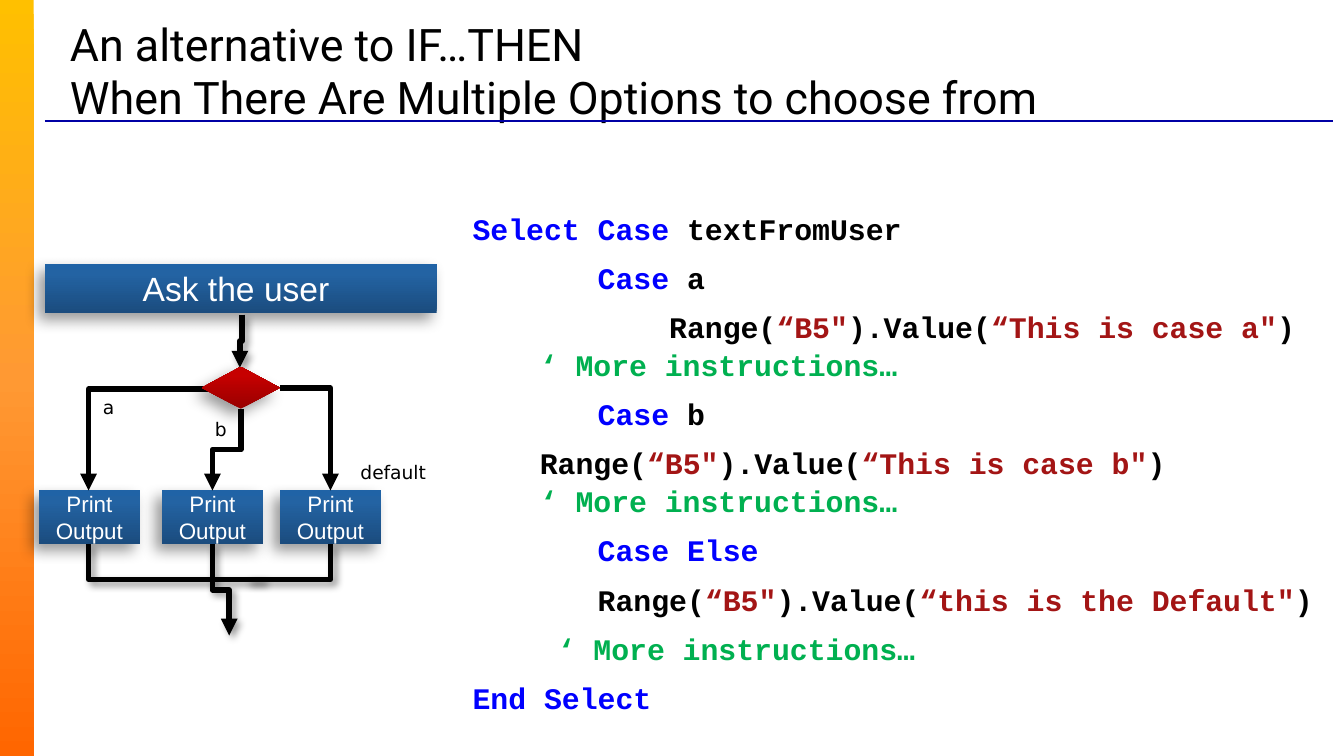
from lxml import etree
from pptx import Presentation
from pptx.dml.color import RGBColor
from pptx.enum.shapes import MSO_CONNECTOR, MSO_SHAPE
from pptx.enum.text import MSO_ANCHOR, MSO_AUTO_SIZE, PP_ALIGN
from pptx.oxml.ns import qn
from pptx.util import Pt

RECT, STEP = MSO_SHAPE.RECTANGLE, MSO_SHAPE.FLOWCHART_PROCESS
CHOICE = MSO_SHAPE.FLOWCHART_DECISION
LINE, ELBOW = MSO_CONNECTOR.STRAIGHT, MSO_CONNECTOR.ELBOW
MIDDLE, TOP = MSO_ANCHOR.MIDDLE, MSO_ANCHOR.TOP
LEFT, CENTER = PP_ALIGN.LEFT, PP_ALIGN.CENTER
NO_FIT = MSO_AUTO_SIZE.NONE

BLACK, WHITE, KEY, TEXT, NOTE = "000000", "FFFFFF", "0000FF", "A31515", "00B050"
BLUES = [(0, "1B4C7E"), (80, "2363A3"), (100, "2063A6")]
REDS = [(0, "980000"), (80, "C60000"), (100, "C70000")]
SUNSET = [(0, "FFC000"), (50, "FF9933"), (100, "FF6600")]
BOX_SHADE, LINE_SHADE = (8, 5, 135), (4, 3, 45)
MORE = (NOTE, "‘ More instructions…")


def call(lead, word):
    """Return the coloured runs of one Range call."""
    return [(BLACK, lead + "Range("), (TEXT, "“B5\""), (BLACK, ").Value("),
            (TEXT, f"“{word}\""), (BLACK, ")")]


CODE = [
    [(KEY, "Select Case"), (BLACK, " textFromUser")],
    [(KEY, "       Case"), (BLACK, " a")],
    call("           ", "This is case a") + [(BLACK, "\n"), (BLACK, "\t"), MORE],
    [(KEY, "       Case"), (BLACK, " b")],
    call(" \t", "This is case b") + [(BLACK, "\n"), (BLACK, "\t"), MORE],
    [(KEY, "       Case Else")],
    call("       ", "this is the Default"),
    [(NOTE, "\t ‘ More instructions…")],
    [(KEY, "End Select")],
]


def rgb(tone):
    """Turn a hex string into a colour."""
    return RGBColor.from_string(tone)


def add(root, tag, **attrs):
    """Append a child element with the given attributes."""
    return etree.SubElement(root, qn(tag), {k: str(v) for k, v in attrs.items()})


def style(font, name, size, tone=None, bold=False):
    """Set the face, size, colour and weight of a font."""
    font.name, font.size, font.bold = name, Pt(size), bold
    if tone:
        font.color.rgb = rgb(tone)


def place(shape, x, y, w, h):
    """Move and size a shape."""
    shape.left, shape.top, shape.width, shape.height = Pt(x), Pt(y), Pt(w), Pt(h)


def shade(shape, cast=None):
    """Give a shape an outer shadow, or none."""
    effects = add(shape._element.spPr, "a:effectLst")
    if cast:
        blur, gap, turn = cast
        outer = add(effects, "a:outerShdw", blurRad=Pt(blur), dist=Pt(gap),
                    dir=turn * 60000, algn="ctr", rotWithShape=0)
        add(add(outer, "a:srgbClr", val=BLACK), "a:alpha", val=40000)


def block(slide, kind, area, stops, turn, cast=None):
    """Add a borderless shape with a gradient fill."""
    shape = slide.shapes.add_shape(kind, *map(Pt, area))
    shape.fill.gradient()
    shape.fill.gradient_angle = turn
    ramp = shape._element.spPr.find(".//" + qn("a:gsLst"))
    for old in list(ramp):
        ramp.remove(old)
    for spot, tone in stops:
        add(add(ramp, "a:gs", pos=spot * 1000), "a:srgbClr", val=tone)
    shape.line.fill.background()
    shade(shape, cast)
    return shape


def step(slide, area, text, size):
    """Add a blue process box with centred text."""
    frame = block(slide, STEP, area, BLUES, 90, BOX_SHADE).text_frame
    frame.word_wrap, frame.vertical_anchor = True, MIDDLE
    frame.margin_left = frame.margin_right = Pt(3.6)
    frame.margin_top = frame.margin_bottom = Pt(3.6)
    frame.text = text
    para = frame.paragraphs[0]
    para.alignment = CENTER
    style(para.font, "Arial", size, WHITE)


def stroke(slide, kind, ends, tone, width):
    """Add a plain connector."""
    line = slide.shapes.add_connector(kind, *map(Pt, ends))
    line.line.color.rgb, line.line.width = rgb(tone), Pt(width)
    return line


def bend(slide, start, end, bends, down=True, head=True, cast=None):
    """Add an elbow line that leaves its start downward or sideways."""
    (x1, y1), (x2, y2) = start, end
    ends, turn = (x1, y1, x2, y2), 0
    if down:
        mid, level = (x1 + x2) / 2, (y1 + y2) / 2
        rise, run = (y2 - y1) / 2, abs(x2 - x1) / 2
        turn = 90 if x2 < x1 else 270
        if turn == 270:
            rise = -rise
        ends = mid - rise, level - run, mid + rise, level + run
    line = stroke(slide, ELBOW, ends, BLACK, 3)
    props = line._element.spPr
    props.find(qn("a:prstGeom")).set("prst", f"bentConnector{bends + 1}")
    if turn:
        props.find(qn("a:xfrm")).set("rot", str(turn * 60000))
    if head:
        add(props.find(qn("a:ln")), "a:tailEnd", type="triangle")
    shade(line, cast)


def label(slide, x, y, w, text):
    """Add a small branch label."""
    frame = slide.shapes.add_textbox(Pt(x), Pt(y), Pt(w), Pt(19.4)).text_frame
    frame.word_wrap = True
    frame.text = text
    style(frame.paragraphs[0].font, "DejaVu Sans", 10, BLACK)


def head(slide):
    """Fill the title."""
    title = slide.shapes.title
    place(title, 30.24, 16.56, 672, 42)
    frame = title.text_frame
    frame.text = "An alternative to IF…THEN\vWhen There Are Multiple Options to choose from"
    frame.auto_size, frame.vertical_anchor = NO_FIT, MIDDLE
    para = frame.paragraphs[0]
    para.alignment = LEFT
    style(para.font, "Roboto", 24, BLACK)


def code(slide):
    """Fill the body with the coloured listing."""
    body = slide.placeholders[1]
    place(body, 246, 108, 468, 270)
    frame = body.text_frame
    frame.auto_size, frame.vertical_anchor = NO_FIT, TOP
    for i, row in enumerate(CODE):
        para = frame.add_paragraph() if i else frame.paragraphs[0]
        props = para._p.get_or_add_pPr()
        props.set("marL", "0")
        props.set("indent", "0")
        add(props, "a:buNone")
        add(add(props, "a:tabLst"), "a:tab", pos=Pt(72), algn="l")
        para.space_before, para.line_spacing = Pt(6 if i else 0), 1.06
        style(para.font, "Courier New", 16, bold=True)
        for tone, text in row:
            if text == "\n":
                para.add_line_break()
                continue
            run = para.add_run()
            run.text = text
            run.font.color.rgb = rgb(tone)


def chart(slide):
    """Draw the flow chart."""
    step(slide, (24, 141.3, 210, 26.4), "Ask the user ", 18)
    bend(slide, (129.6, 168.5), (128.5, 197), 2, cast=LINE_SHADE)
    bend(slide, (113.8, 291.6), (122.8, 340.5), 2, cast=LINE_SHADE)
    for x in (20.9, 86.8, 150):
        step(slide, (x, 262.8, 54, 28.8), "Print Output", 12)
    bend(slide, (47.5, 291.6), (141, 310.4), 1, head=False, cast=LINE_SHADE)
    bend(slide, (177, 291.6), (132, 310.4), 1, head=False, cast=LINE_SHADE)
    bend(slide, (116.6, 208.5), (47.5, 262.8), 1, down=False)
    bend(slide, (129, 219), (113.8, 262.8), 2)
    bend(slide, (150, 208), (177, 262.8), 1, down=False)
    label(slide, 48, 208.8, 24, "a")
    label(slide, 108, 220.5, 24, "b")
    label(slide, 186, 243.5, 54, "default")
    block(slide, CHOICE, (108, 196.5, 42, 22.5), REDS, 90, BOX_SHADE)


def main():
    """Build and save the slide."""
    deck = Presentation()
    deck.slide_width, deck.slide_height = Pt(720), Pt(405)
    slide = deck.slides.add_slide(deck.slide_layouts[1])
    block(slide, RECT, (0, 0, 18, 405), SUNSET, 270)
    shade(stroke(slide, LINE, (24, 64.8, 714, 64.8), "0000A5", 0.75))
    head(slide)
    code(slide)
    chart(slide)
    deck.save("out.pptx")


if __name__ == "__main__":
    main()
